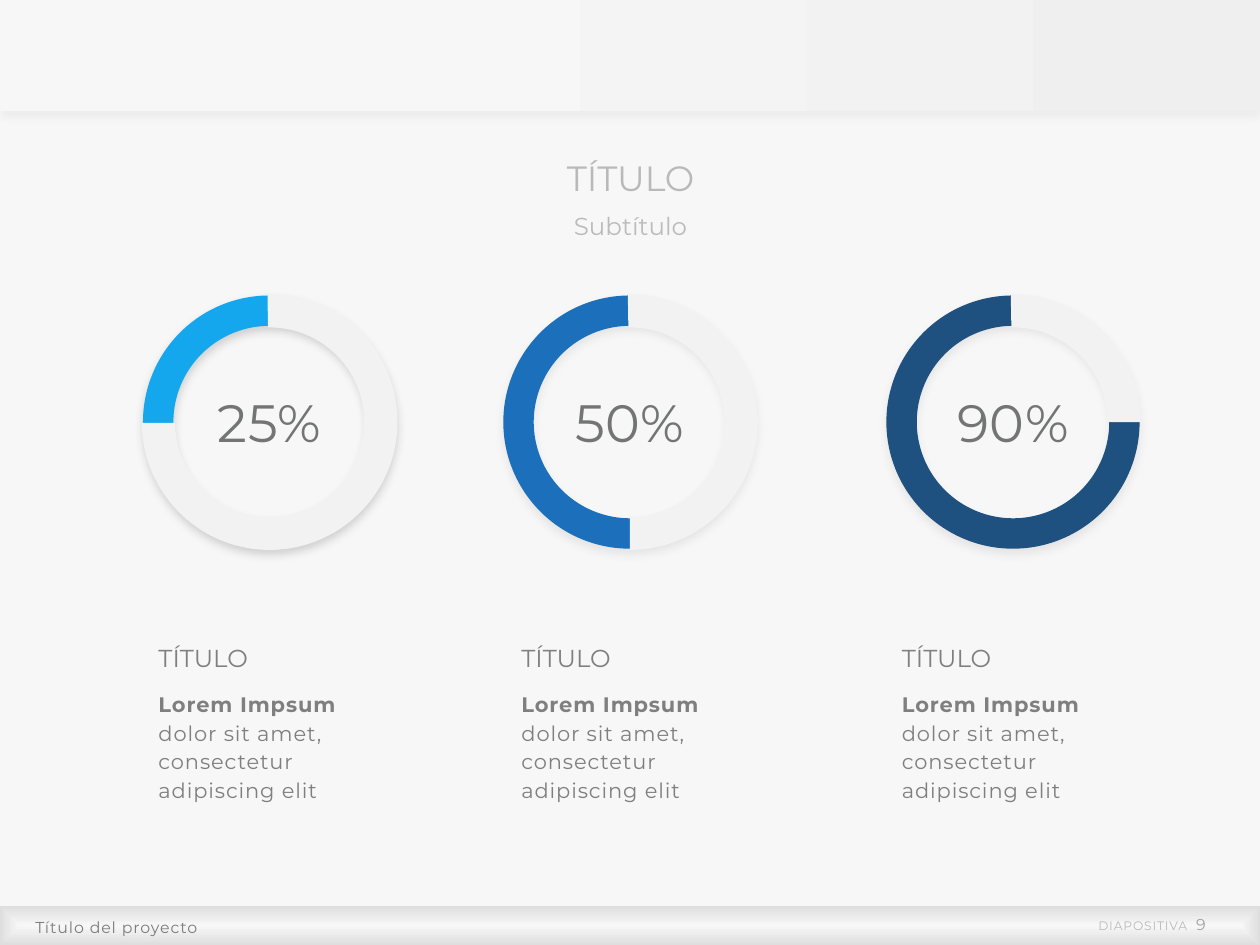
from lxml import etree
from pptx import Presentation
from pptx.dml.color import RGBColor
from pptx.enum.shapes import MSO_SHAPE
from pptx.enum.text import MSO_ANCHOR, MSO_AUTO_SIZE, PP_ALIGN
from pptx.oxml.ns import qn
from pptx.util import Inches, Pt

RECT, DONUT, ARC = MSO_SHAPE.RECTANGLE, MSO_SHAPE.DONUT, MSO_SHAPE.BLOCK_ARC
TOP, MIDDLE, BOTTOM = MSO_ANCHOR.TOP, MSO_ANCHOR.MIDDLE, MSO_ANCHOR.BOTTOM
LEFT, CENTER, RIGHT = PP_ALIGN.LEFT, PP_ALIGN.CENTER, PP_ALIGN.RIGHT
GROW, FIXED = MSO_AUTO_SIZE.SHAPE_TO_FIT_TEXT, MSO_AUTO_SIZE.NONE

FONT = "Montserrat"
COLORS = {
    "paper": "F7F7F7", "header_end": "EFEFEF", "footer_edge": "DEDEDE",
    "track": "F2F2F2", "shadow": "000000",
    "title": "B9B9B9", "subtitle": "BBBBBB", "project": "7C7C7C",
    "page_number": "A1A1A1", "percent": "737474", "body": "7F7F7F",
    "sky": "14A7ED", "blue": "1C6FBA", "navy": "1E5080",
}

# The track arc covers the part of the ring that is not filled.
GAUGES = [
    {"label": "25%", "color": "sky", "center": 2.14, "text_left": 1.16,
     "track_start": 0.26, "shadow": 17},
    {"label": "50%", "color": "blue", "center": 5.0, "text_left": 4.04,
     "track_start": 54.01, "shadow": 7},
    {"label": "90%", "color": "navy", "center": 8.04, "text_left": 7.06,
     "track_start": 107.98, "shadow": 7},
]
HEADING = "TÍTULO"
BODY_LEAD = "Lorem Impsum "
BODY_REST = "dolor sit amet, consectetur adipiscing elit"

RING_MIDDLE, RING_SIZE, TRACK_SIZE = 3.35, 2.01, 2.03
RING_WIDTH, TRACK_END, TRACK_WIDTH = 0.12, 162.57, 0.13


def rgb(name):
    return RGBColor.from_string(COLORS[name])


def add_shape(parent, kind, left, top, width, height, color=None):
    shape = parent.add_shape(kind, Inches(left), Inches(top),
                             Inches(width), Inches(height))
    shape.shadow.inherit = False
    shape.line.fill.background()
    if color:
        shape.fill.solid()
        shape.fill.fore_color.rgb = rgb(color)
    return shape


def add_shadow(shape, opacity, blur):
    """Drop a shadow 3 pt straight down; opacity is in percent."""
    effects = shape._element.spPr.find(qn("a:effectLst"))
    outer = etree.SubElement(effects, qn("a:outerShdw"), blurRad=str(Pt(blur)),
                             dist=str(Pt(3)), dir="5400000", algn="t",
                             rotWithShape="0")
    color = etree.SubElement(outer, qn("a:srgbClr"), val=COLORS["shadow"])
    etree.SubElement(color, qn("a:alpha"), val=str(opacity * 1000))


def set_gradient(shape, stops):
    shape.fill.gradient()
    shape.fill.gradient_angle = 0
    for stop, (position, color) in zip(shape.fill.gradient_stops, stops):
        stop.position = position
        stop.color.rgb = rgb(color)


def make_gradient_radiate(shape):
    """Turn a linear gradient into one that spreads from the centre."""
    gradient = shape._element.spPr.find(qn("a:gradFill"))
    gradient.remove(gradient.find(qn("a:lin")))
    spread = etree.SubElement(gradient, qn("a:path"), path="shape")
    etree.SubElement(spread, qn("a:fillToRect"),
                     {side: "50000" for side in "ltrb"})


def fill_text(box, spans, align=LEFT, anchor=TOP, line=None, wrap=True,
              fit=GROW, insets=(0.1, 0.05, 0.1, 0.05)):
    """Write one paragraph of (text, size, color, spacing, bold) spans."""
    frame = box.text_frame
    frame_format = {"word_wrap": wrap, "auto_size": fit, "vertical_anchor": anchor}
    sides = ("margin_left", "margin_top", "margin_right", "margin_bottom")
    frame_format.update(zip(sides, map(Inches, insets)))
    for name, value in frame_format.items():
        setattr(frame, name, value)
    para = frame.paragraphs[0]
    para.alignment = align
    para.line_spacing = line
    for text, size, color, spacing, bold in spans:
        span = para.add_run()
        span.text = text
        for name, value in {"name": FONT, "size": Pt(size), "bold": bold}.items():
            setattr(span.font, name, value)
        span.font.color.rgb = rgb(color)
        span._r.get_or_add_rPr().set("spc", str(round(spacing * 100)))


def add_text(page, left, top, width, height, spans, **options):
    box = page.shapes.add_textbox(Inches(left), Inches(top),
                                  Inches(width), Inches(height))
    fill_text(box, spans, **options)


def add_gauge(page, gauge):
    group = page.shapes.add_group_shape()
    parts = [
        (DONUT, RING_SIZE, gauge["color"], [RING_WIDTH]),
        (ARC, TRACK_SIZE, "track", [gauge["track_start"], TRACK_END, TRACK_WIDTH]),
    ]
    for kind, size, color, adjustments in parts:
        part = add_shape(group.shapes, kind, gauge["center"] - size / 2,
                         RING_MIDDLE - size / 2, size, size, color)
        for index, value in enumerate(adjustments):
            part.adjustments[index] = value
        part._element.spPr.find(qn("a:xfrm")).set("flipH", "1")
        if kind == DONUT:
            add_shadow(part, gauge["shadow"], 5.6)
    add_text(page, gauge["center"] - 0.55, 3.05, 1.1, 0.61,
             [(gauge["label"], 30, "percent", 0.3, False)],
             align=CENTER, wrap=False)


def add_caption(page, left):
    add_text(page, left, 4.84, 1.87, 0.55,
             [(HEADING, 14, "body", 0, False)], anchor=BOTTOM, line=0.9)
    add_text(page, left, 5.41, 1.87, 1.06,
             [(BODY_LEAD, 12, "body", 0.5, True),
              (BODY_REST, 12, "body", 0.5, False)], line=1.14)


def main():
    deck = Presentation()
    deck.slide_width, deck.slide_height = Inches(10), Inches(7.5)
    page = deck.slides.add_slide(deck.slide_layouts[5])
    page.background.fill.solid()
    page.background.fill.fore_color.rgb = rgb("paper")

    header = add_shape(page.shapes, RECT, 0, 0, 10, 0.88)
    set_gradient(header, [(0.28, "paper"), (1, "header_end")])
    add_shadow(header, 3, 4)
    footer = add_shape(page.shapes, RECT, 0, 7.19, 10, 0.31)
    set_gradient(footer, [(0, "paper"), (1, "footer_edge")])
    make_gradient_radiate(footer)

    title = page.shapes.title
    title.left, title.top = Inches(3.19), Inches(1.22)
    title.width, title.height = Inches(3.63), Inches(0.41)
    fill_text(title, [(HEADING, 20, "title", 0, False)],
              align=CENTER, anchor=BOTTOM, line=0.9)
    add_text(page, 3.19, 1.65, 3.63, 0.32,
             [("Subtítulo", 14, "subtitle", 0, False)], align=CENTER, line=0.9)

    for gauge in GAUGES:
        add_gauge(page, gauge)
        add_caption(page, gauge["text_left"])

    add_text(page, 0.24, 7.19, 7.36, 0.31,
             [("Título del proyecto", 9, "project", 0.5, False)],
             anchor=MIDDLE, line=1.14, fit=FIXED, insets=(0.04, 0, 0, 0))
    add_text(page, 8.54, 7.26, 1.03, 0.15,
             [("DIAPOSITIVA", 7, "title", 0.5, False),
              (" ", 7, "title", 2.8, False),
              ("9", 9, "page_number", 0, False)],
             align=RIGHT, wrap=False, insets=(0, 0, 0, 0))
    deck.save("out.pptx")


if __name__ == "__main__":
    main()
